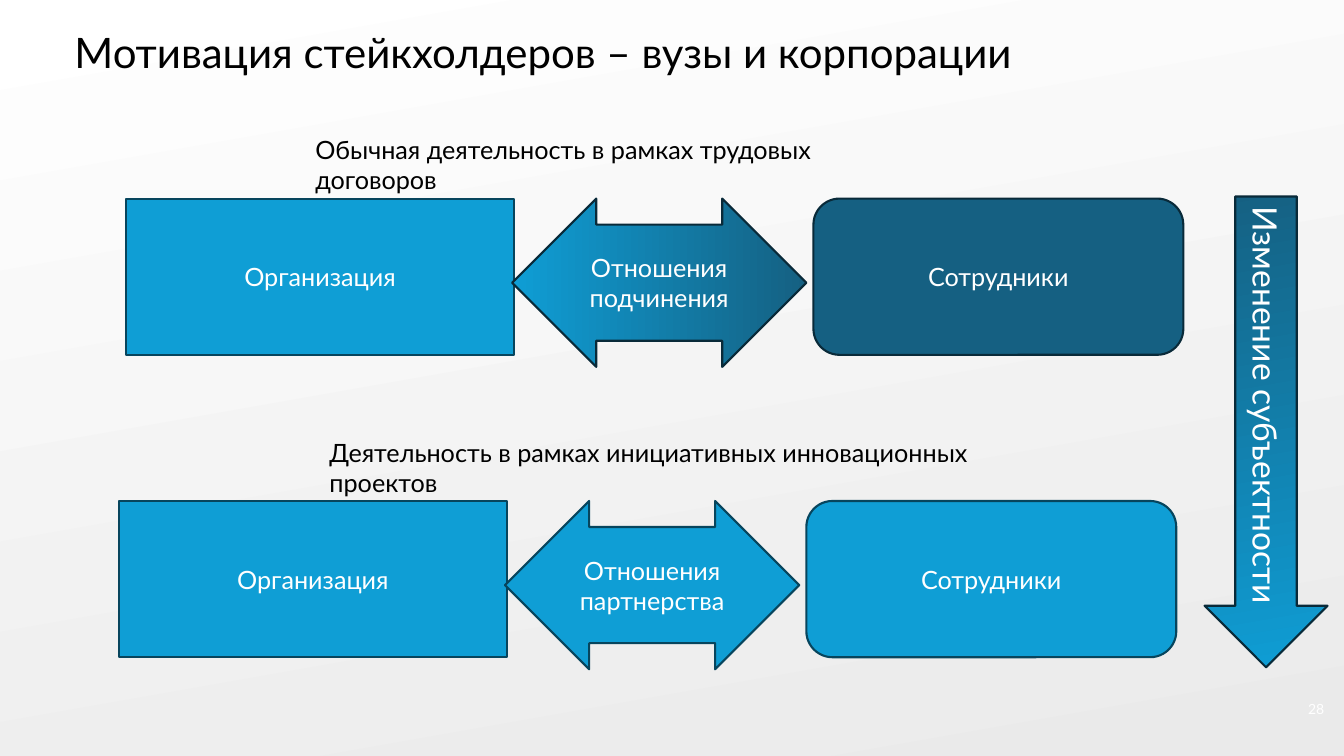
from pptx import Presentation
from pptx.dml.color import RGBColor
from pptx.enum.shapes import MSO_SHAPE
from pptx.enum.text import MSO_ANCHOR, PP_ALIGN
from pptx.oxml.ns import qn
from pptx.util import Pt

RECTANGLE = MSO_SHAPE.RECTANGLE
ROUNDED = MSO_SHAPE.ROUNDED_RECTANGLE
DOUBLE_ARROW = MSO_SHAPE.LEFT_RIGHT_ARROW
DOWN_ARROW = MSO_SHAPE.DOWN_ARROW
TOP, MIDDLE = MSO_ANCHOR.TOP, MSO_ANCHOR.MIDDLE
LEFT, CENTER, RIGHT = PP_ALIGN.LEFT, PP_ALIGN.CENTER, PP_ALIGN.RIGHT

WHITE = RGBColor(0xFF, 0xFF, 0xFF)
PALE_GRAY = RGBColor(0xEA, 0xEA, 0xEA)
BLACK = RGBColor(0, 0, 0)
BLUE = RGBColor(0x0F, 0x9E, 0xD5)
TEAL = RGBColor(0x15, 0x60, 0x82)
BLUE_LINE = RGBColor(0x07, 0x45, 0x5D)
TEAL_LINE = RGBColor(0x09, 0x2A, 0x39)
FONT = "Lato"

# Each row: origin, caption offset and width, texts and colours
ROWS = [
    {"origin": (90, 141.84), "caption_at": (128.16, -49.68), "caption_width": 447.12,
     "caption": "Обычная деятельность в рамках трудовых договоров",
     "relation": "Отношения подчинения", "staff_fill": TEAL,
     "arrow_fill": (BLUE, TEAL, 0), "line": TEAL_LINE},
    {"origin": (84.96, 357.84), "caption_at": (143.28, -48.96), "caption_width": 539.28,
     "caption": "Деятельность в рамках инициативных инновационных проектов",
     "relation": "Отношения партнерства", "staff_fill": BLUE,
     "arrow_fill": BLUE, "line": BLUE_LINE},
]


def apply_fill(fill, colour):
    """A colour gives a solid fill; (start, end, angle) gives a gradient."""
    if isinstance(colour, RGBColor):
        fill.solid()
        fill.fore_color.rgb = colour
        return
    start, end, angle = colour
    fill.gradient()
    fill.gradient_angle = angle
    for stop, position, stop_colour in zip(fill.gradient_stops, (0, 1), (start, end)):
        stop.position = position
        stop.color.rgb = stop_colour


def write_text(shape, text, size, colour, align, anchor):
    frame = shape.text_frame
    frame.word_wrap = True
    frame.vertical_anchor = anchor
    paragraph = frame.paragraphs[0]
    paragraph.alignment = align
    run = paragraph.add_run()
    run.text = text
    run.font.color.rgb = colour
    for name, value in {"name": FONT, "size": Pt(size)}.items():
        setattr(run.font, name, value)
    return paragraph


def add_text(slide, box, text, size, colour=BLACK, align=LEFT, anchor=TOP):
    shape = slide.shapes.add_textbox(*map(Pt, box))
    return write_text(shape, text, size, colour, align, anchor)


def add_figure(slide, kind, box, text, fill, line, size=18):
    shape = slide.shapes.add_shape(kind, *map(Pt, box))
    shape.shadow.inherit = False
    apply_fill(shape.fill, fill)
    shape.line.color.rgb = line
    shape.line.width = Pt(1.5)
    write_text(shape, text, size, WHITE, CENTER, MIDDLE)
    return shape


def add_row(slide, row):
    left, top = row["origin"]
    # Organisation and staff
    add_figure(slide, RECTANGLE, (left, top, 277.2, 111.6),
               "Организация", BLUE, BLUE_LINE)
    add_figure(slide, ROUNDED, (left + 491.04, top, 264.24, 111.6),
               "Сотрудники", row["staff_fill"], row["line"])
    # Relation between them
    arrow = add_figure(slide, DOUBLE_ARROW, (left + 275.76, top, 210.24, 120.24),
                       row["relation"], row["arrow_fill"], row["line"])
    arrow.adjustments[0] = 0.69
    # Caption above
    shift_x, shift_y = row["caption_at"]
    add_text(slide, (left + shift_x, top + shift_y, row["caption_width"], 28.8),
             row["caption"], 18)


def add_change_arrow(slide, box):
    arrow = add_figure(slide, DOWN_ARROW, box, "Изменение субъектности",
                       (TEAL, BLUE, 280), TEAL_LINE, 24)
    arrow.element.find(".//" + qn("a:bodyPr")).set("vert", "eaVert")


def main():
    presentation = Presentation()
    presentation.slide_width, presentation.slide_height = Pt(960), Pt(540)
    slide = presentation.slides.add_slide(presentation.slide_layouts[6])
    apply_fill(slide.background.fill, (WHITE, PALE_GRAY, 280))

    # Title
    title = add_text(slide, (46.08, 19.44, 858.24, 43.2),
                     "Мотивация стейкхолдеров – вузы и корпорации", 30)
    title.line_spacing = 0.9

    # Rows and the arrow that joins them
    for row in ROWS:
        add_row(slide, row)
    add_change_arrow(slide, (860.4, 140.4, 87.84, 336.24))

    # Slide number
    add_text(slide, (880, 494, 73, 25), "28", 10, WHITE, RIGHT, MIDDLE)
    presentation.save("out.pptx")


if __name__ == "__main__":
    main()
